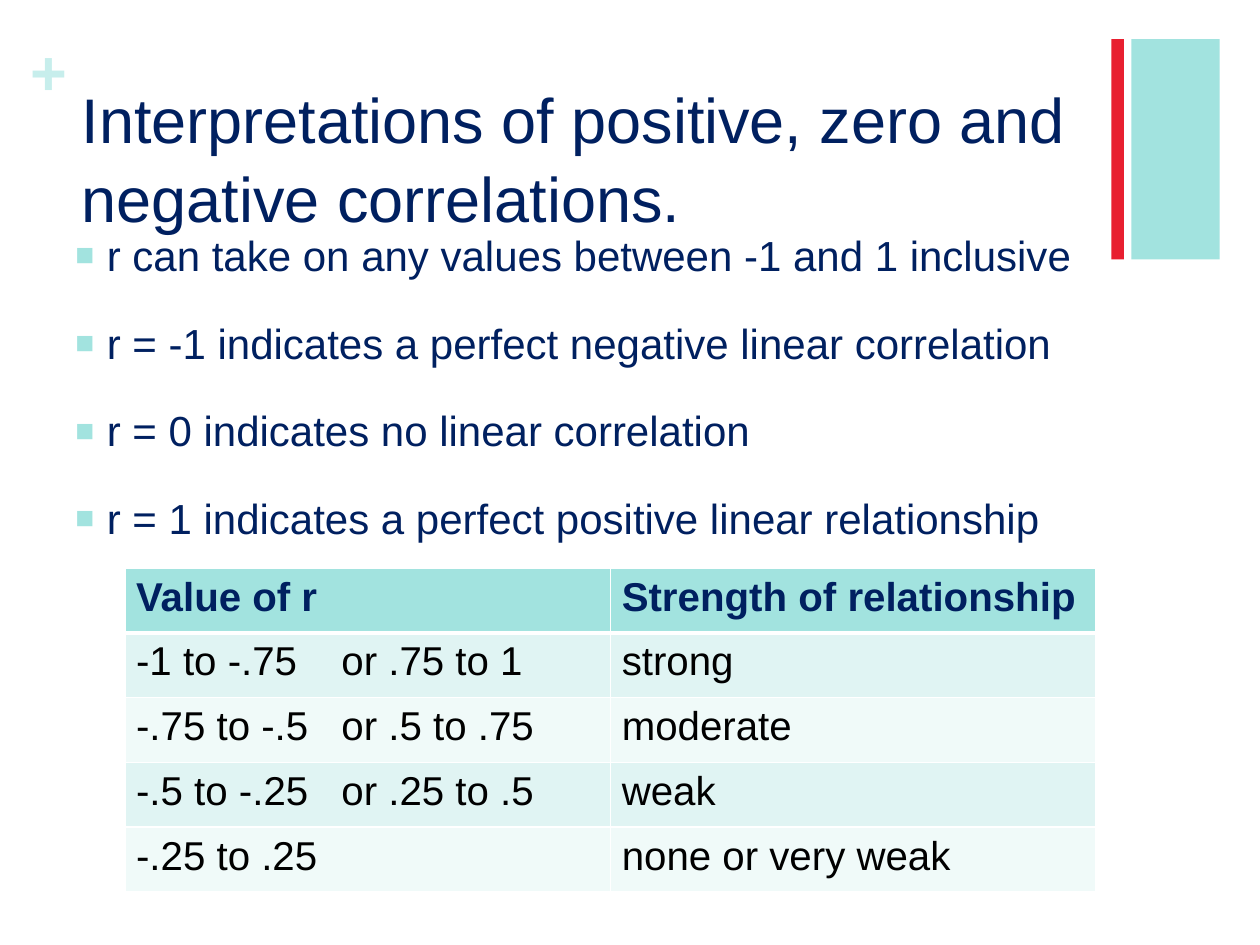
from lxml import etree
from pptx import Presentation
from pptx import util as u
from pptx.dml.color import RGBColor
from pptx.enum import shapes, text
from pptx.oxml import ns

NAVY, AQUA, PALE_AQUA, RED = "002060", "A2E3DF", "C7EEEC", "E81F30"
BANDS = ("E0F4F3", "F0FAF9")
POINTS = (
    "r can take on any values between -1 and 1 inclusive",
    "r = -1 indicates a perfect negative linear correlation",
    "r = 0 indicates no linear correlation",
    "r = 1 indicates a perfect positive linear relationship",
)
STRENGTHS = (
    ("Value of r", "Strength of relationship"),
    ("-1 to -.75\tor .75 to 1", "strong"),
    ("-.75 to -.5\tor .5 to .75", "moderate"),
    ("-.5 to -.25\tor .25 to .5", "weak"),
    ("-.25 to .25", "none or very weak"),
)


def colour(value):
    return RGBColor.from_string(value)


def add_xml(parent, tag, **attributes):
    return etree.SubElement(parent, ns.qn(tag), attributes)


class SlideBuilder:
    font = "Arial"
    line_spacing = 1.05

    def __init__(self, slide):
        self.slide = slide

    def style(self, paragraph, size, ink, bold=False):
        for run in paragraph.runs:
            run.font.name = self.font
            run.font.size = u.Pt(size)
            run.font.bold = bold
            run.font.color.rgb = colour(ink)

    def bar(self, left, top, width, height, fill):
        bar = self.slide.shapes.add_shape(
            shapes.MSO_SHAPE.RECTANGLE, *map(u.Inches, (left, top, width, height)))
        bar.shadow.inherit = False
        bar.fill.solid()
        bar.fill.fore_color.rgb = colour(fill)
        bar.line.fill.background()

    def frame(self, left, top, width, height, words):
        box = self.slide.shapes.add_textbox(*map(u.Inches, (left, top, width, height)))
        frame = box.text_frame
        frame.word_wrap = True
        frame.text = words
        return frame

    def plus(self, left, top, width, height):
        frame = self.frame(left, top, width, height, "+")
        frame.margin_left = frame.margin_right = 0
        frame.margin_top = frame.margin_bottom = 0
        frame.vertical_anchor = text.MSO_ANCHOR.MIDDLE
        self.style(frame.paragraphs[0], 36, PALE_AQUA, True)

    def title(self, left, top, width, height, words):
        frame = self.frame(left, top, width, height, words)
        frame.margin_top = u.Inches(0.08)
        frame.paragraphs[0].line_spacing = self.line_spacing
        self.style(frame.paragraphs[0], 36, NAVY)

    def bullets(self, left, top, width, height, points):
        frame = self.frame(left, top, width, height, "\n".join(points))
        for paragraph in frame.paragraphs:
            paragraph.line_spacing = self.line_spacing
            paragraph.space_before = u.Pt(20)
            self.style(paragraph, 24, NAVY)
            props = paragraph._p.get_or_add_pPr()
            props.set("marL", str(u.Inches(0.25)))
            props.set("indent", str(-u.Inches(0.25)))
            add_xml(add_xml(props, "a:buClr"), "a:srgbClr", val=AQUA)
            add_xml(props, "a:buSzPct", val="75000")
            add_xml(props, "a:buFont", typeface=self.font)
            add_xml(props, "a:buChar", char="■")

    def borders(self, cell, top, bottom):
        props = cell._tc.get_or_add_tcPr()
        for side, points in (("L", 1), ("R", 1), ("T", top), ("B", bottom)):
            line = add_xml(props, f"a:ln{side}", w=str(u.Pt(points)))
            add_xml(add_xml(line, "a:solidFill"), "a:srgbClr", val="FFFFFF")

    def table(self, left, top, width, height, rows):
        table = self.slide.shapes.add_table(
            len(rows), len(rows[0]), *map(u.Inches, (left, top, width, height))).table
        for r, row in enumerate(rows):
            header = r == 0
            for c, words in enumerate(row):
                cell = table.cell(r, c)
                self.borders(cell, 3 if r == 1 else 1, 3 if header else 1)
                cell.fill.solid()
                cell.fill.fore_color.rgb = colour(AQUA if header else BANDS[(r - 1) % 2])
                cell.margin_left = cell.margin_right = u.Inches(0.09)
                cell.text_frame.text = words
                paragraph = cell.text_frame.paragraphs[0]
                self.style(paragraph, 23, NAVY if header else "000000", header)
                if "\t" in words:
                    stops = add_xml(paragraph._p.get_or_add_pPr(), "a:tabLst")
                    add_xml(stops, "a:tab", pos=str(u.Inches(1.63)), algn="l")


def main():
    deck = Presentation()
    deck.slide_width, deck.slide_height = u.Inches(10), u.Inches(7.5)
    builder = SlideBuilder(deck.slides.add_slide(deck.slide_layouts[6]))
    builder.bar(8.98, 0.31, 0.7, 1.75, AQUA)
    builder.plus(0.24, 0.25, 0.28, 0.61)
    builder.bar(8.82, 0.31, 0.1, 1.75, RED)
    builder.title(0.55, 0.53, 8.26, 1.22,
                  "Interpretations of positive, zero and negative correlations.")
    builder.bullets(0.5, 1.75, 9, 4.8, POINTS)
    builder.table(0.99, 4.51, 7.71, 2.57, STRENGTHS)
    deck.save("out.pptx")


if __name__ == "__main__":
    main()
